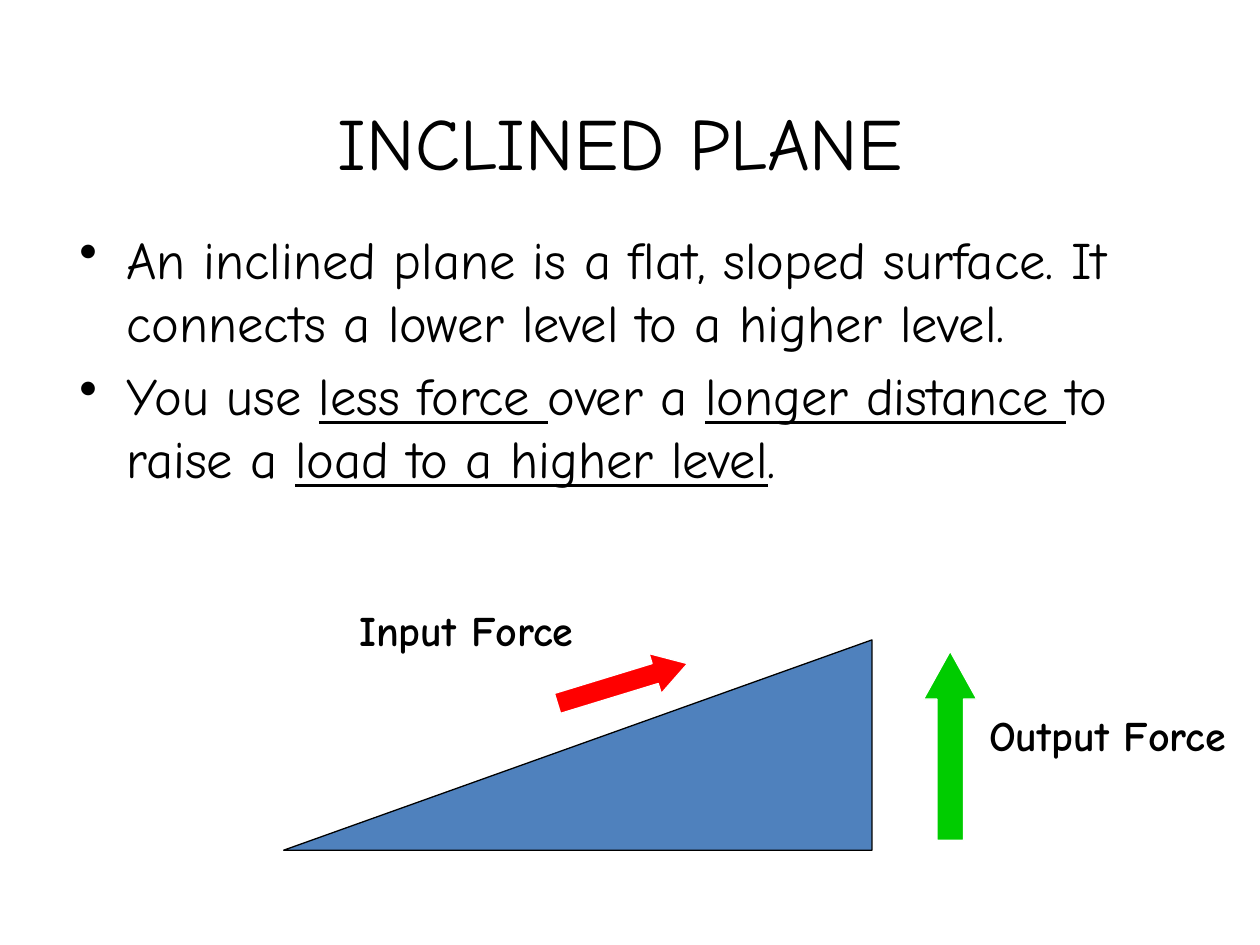
from lxml import etree
from pptx import Presentation, util as u
from pptx.dml.color import RGBColor
from pptx.enum import shapes, text
from pptx.oxml.ns import qn

FONT = "Comic Neue"
HUES = {"ink": "000000", "edge": "FFFFFF", "ramp": "4F81BD",
        "input": "FF0000", "output": "00CC00"}
KIND = shapes.MSO_SHAPE


def hue(name):
    """Return the named colour."""
    return RGBColor.from_string(HUES[name])


def style(para, size, bold=False):
    """Set the font of a paragraph."""
    font = para.font
    font.name, font.size, font.bold = FONT, u.Pt(size), bold
    font.color.rgb = hue("ink")


def add_box(slide, box):
    """Add a wrapping text box and return its frame."""
    frame = slide.shapes.add_textbox(*map(u.Cm, box)).text_frame
    frame.word_wrap = True
    return frame


def add_title(slide, words, box):
    """Add the title, set slightly right of the box centre."""
    frame = add_box(slide, box)
    frame.margin_left = u.Cm(1.2)
    frame.vertical_anchor = text.MSO_ANCHOR.MIDDLE
    para = frame.paragraphs[0]
    para.text = words
    para.alignment = text.PP_ALIGN.CENTER
    style(para, 42)


def add_list(slide, items, box):
    """Add bullets whose every second piece is underlined."""
    frame = add_box(slide, box)
    for i, item in enumerate(items):
        para = frame.add_paragraph() if i else frame.paragraphs[0]
        for j, piece in enumerate(item):
            run = para.add_run()
            run.text = piece
            if j % 2:
                run.font.underline = True
        para.space_before = u.Pt(6)
        style(para, 30)
        props = para._p.get_or_add_pPr()
        props.set("marL", str(u.Cm(0.95)))
        props.set("indent", str(u.Cm(-0.95)))
        mark = etree.Element(qn("a:buChar"), char="•")
        props.insert_element_before(mark, "a:tabLst", "a:defRPr", "a:extLst")


def add_label(slide, words, box):
    """Add a bold label."""
    para = add_box(slide, box).paragraphs[0]
    para.text = words
    style(para, 24, bold=True)


def add_form(slide, kind, box, fill, line, turn=0, head=None):
    """Add a filled shape, with an arrowhead length where given."""
    form = slide.shapes.add_shape(kind, *map(u.Cm, box))
    form.shadow.inherit = False
    form.fill.solid()
    form.fill.fore_color.rgb = hue(fill)
    form.line.color.rgb = hue(line)
    form.line.width = u.Pt(0.75)
    form.rotation = turn
    if head:
        form.adjustments[0] = 0.5
        form.adjustments[1] = head
    return form


def main():
    """Build the inclined plane slide."""
    deck = Presentation()
    deck.slide_width, deck.slide_height = u.Cm(25.4), u.Cm(19.05)
    slide = deck.slides.add_slide(deck.slide_layouts[6])
    add_title(slide, "INCLINED PLANE", (1.55, 0.84, 20.96, 3.99))
    add_list(slide, [
        ["An inclined plane is a flat, sloped surface. "
         "It connects a lower level to a higher level."],
        ["You use ", "less force ", "over a ", "longer distance ",
         "to raise a ", "load to a higher level", "."],
    ], (1.35, 4.45, 22.43, 13.54))
    ramp = add_form(slide, KIND.RIGHT_TRIANGLE, (5.72, 12.9, 11.86, 4.24),
                    "ramp", "ink")
    ramp._element.spPr.xfrm.set("flipH", "1")
    add_form(slide, KIND.RIGHT_ARROW, (11.18, 13.36, 2.74, 0.84),
             "input", "edge", 343, 0.81)
    add_form(slide, KIND.UP_ARROW, (18.62, 13.13, 1.07, 3.81),
             "output", "edge", head=0.9)
    add_label(slide, "Input Force", (6.99, 12.07, 5.72, 1.27))
    add_label(slide, "Output Force", (19.69, 14.17, 5.72, 2.29))
    deck.save("out.pptx")


if __name__ == "__main__":
    main()
